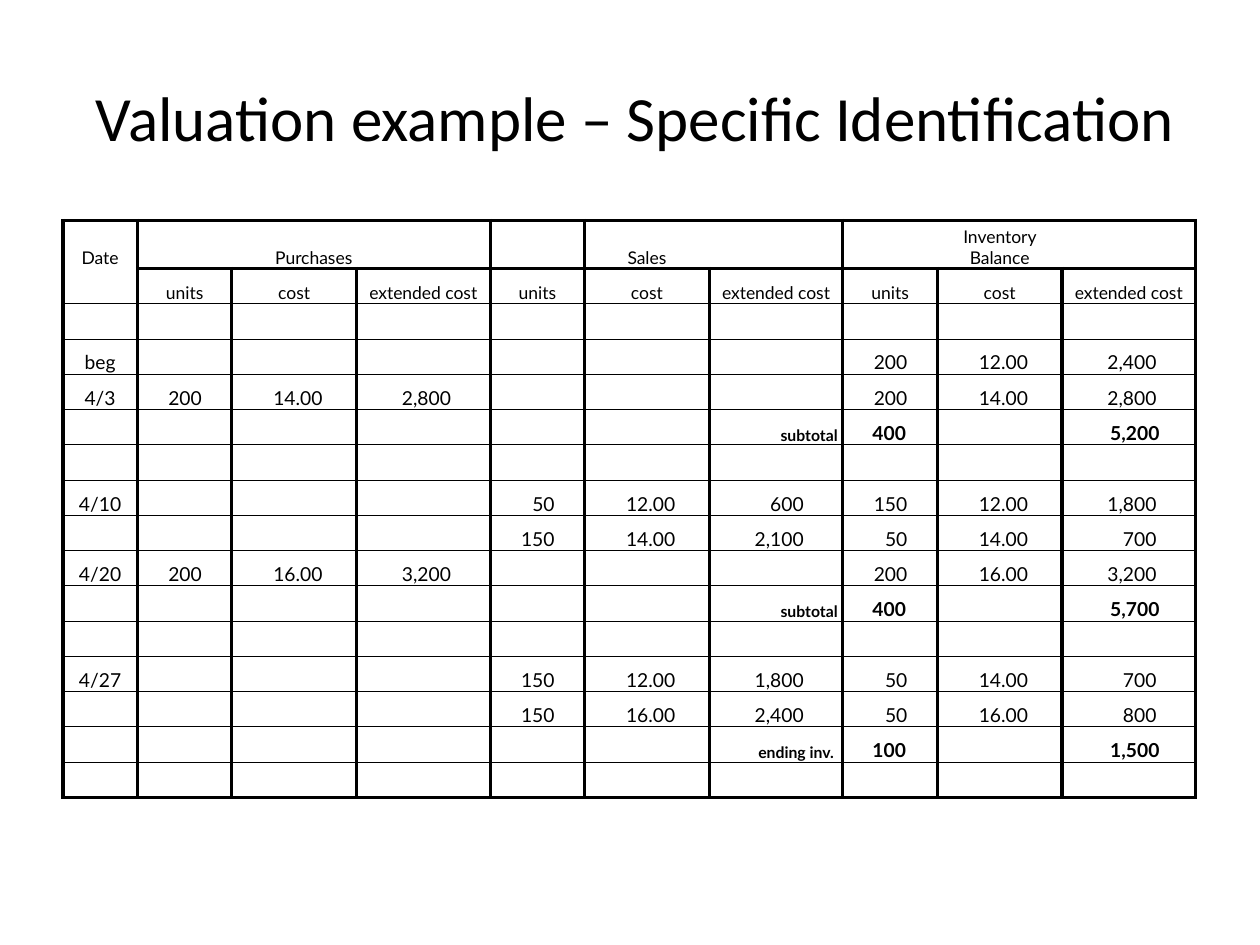
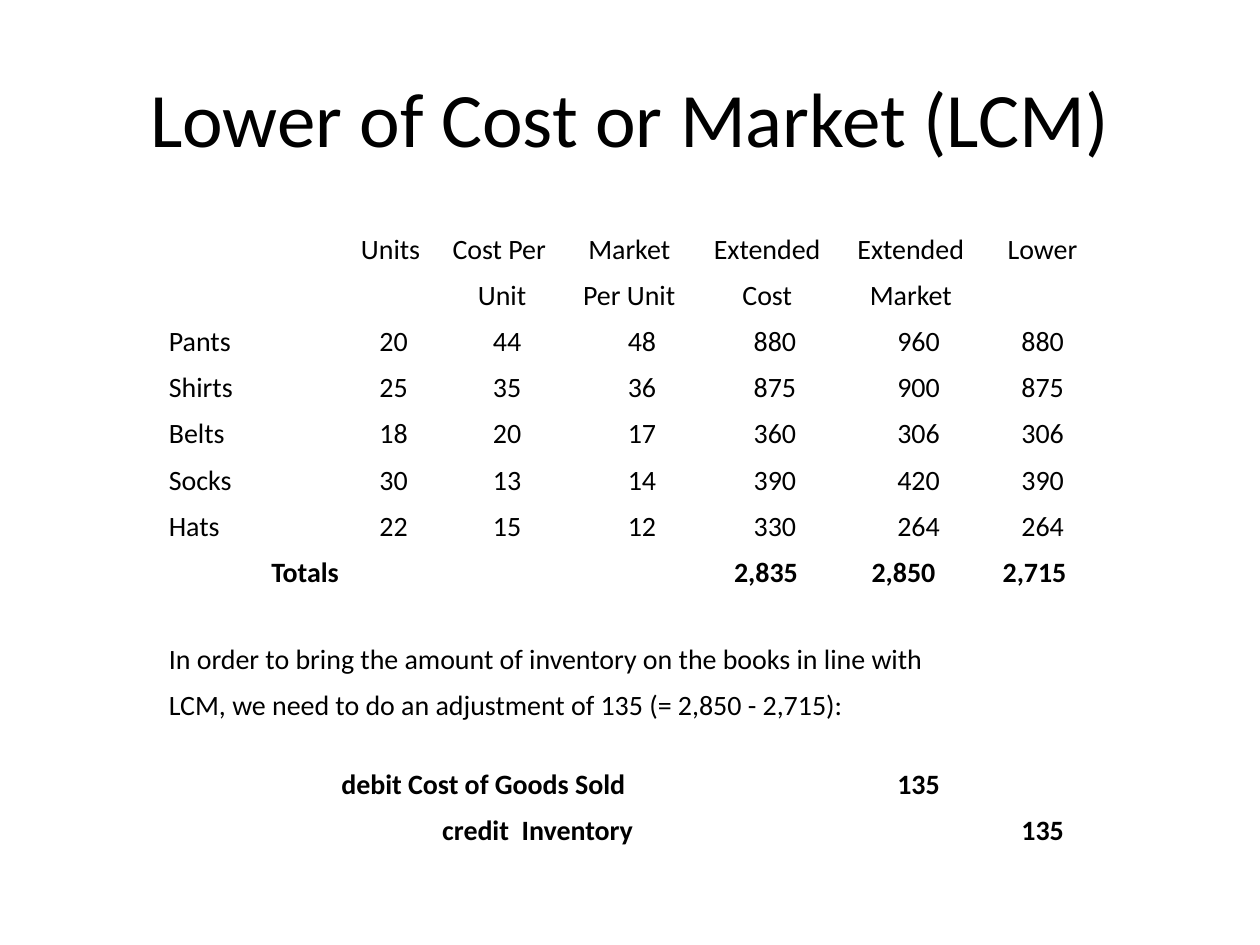
from dataclasses import dataclass

from lxml import etree
from pptx import Presentation
from pptx.dml.color import RGBColor
from pptx.enum.text import MSO_ANCHOR, PP_ALIGN
from pptx.oxml.ns import qn
from pptx.util import Pt

LEFT, CENTER, RIGHT = PP_ALIGN.LEFT, PP_ALIGN.CENTER, PP_ALIGN.RIGHT
MIDDLE, BOTTOM = MSO_ANCHOR.MIDDLE, MSO_ANCHOR.BOTTOM
NO_GRID_STYLE = "{2D5ABB26-0587-4C30-8999-92F81FD0307C}"


@dataclass(frozen=True)
class Theme:
    ink: str = "000000"
    font: str = "Calibri"
    ledger_font: str = "Lato"
    title: int = 44
    long_title: int = 36
    body: int = 16
    ledger: int = 11
    ledger_head: int = 10
    ledger_label: int = 9
    heavy: float = 2
    medium: float = 1
    hair: float = 0.5
    inset: float = 0.75


THEME = Theme()

LEDGER_WIDTHS = [42.48] + [54, 71.28, 76.32] * 3
LEDGER_HEIGHTS = [27.36] + [20.16] * 15
LEDGER_INSETS = [THEME.inset] + [17.1, 19.4, 22.3] * 3
LEDGER_BOLD_INSETS = {7: 17.9, 9: 20.6}
LABEL_INSETS = {"subtotal": 3, "ending inv.": 5.2}
GROUP_EDGES = (0, 1, 4, 7, 10)
LEDGER_ROWS = [
    "Date|Purchases||||Sales|||Inventory Balance|",
    "|units|cost|extended cost|units|cost|extended cost|units|cost|extended cost",
    "|||||||||",
    "beg|||||||200|12.00|2,400",
    "4/3|200|14.00|2,800||||200|14.00|2,800",
    "||||||subtotal|400||5,200",
    "|||||||||",
    "4/10||||50|12.00|600|150|12.00|1,800",
    "||||150|14.00|2,100|50|14.00|700",
    "4/20|200|16.00|3,200||||200|16.00|3,200",
    "||||||subtotal|400||5,700",
    "|||||||||",
    "4/27||||150|12.00|1,800|50|14.00|700",
    "||||150|16.00|2,400|50|16.00|800",
    "||||||ending inv.|100||1,500",
    "|||||||||",
]

LCM_WIDTHS = [98.64, 57.6, 69.84, 75.6, 82.08, 82.08, 68.4]
LCM_HEIGHTS = [26.4] * 8 + [23.3] + [26.4] * 2 + [18.7] + [26.4] * 2
LCM_INSETS = [THEME.inset, 19, 24, 22.5, 24.5, 24.5, 22]
LCM_TOTAL_INSETS = {0: THEME.inset, 4: 23.5, 5: 27, 6: 20.5}
LCM_SPANS = {(9, 0): 7, (10, 0): 7, (12, 1): 3, (13, 2): 2}
TOTALS_ROW = 7
ENTRY_ROWS = (12, 13)
LCM_ROWS = [
    "|Units|Cost Per|Market|Extended|Extended|Lower",
    "||Unit|Per Unit|Cost|Market|",
    "Pants|20|44|48|880|960|880",
    "Shirts|25|35|36|875|900|875",
    "Belts|18|20|17|360|306|306",
    "Socks|30|13|14|390|420|390",
    "Hats|22|15|12|330|264|264",
    "Totals||||2,835|2,850|2,715",
    "||||||",
    "In order to bring the amount of inventory on the books in line with||||||",
    "LCM, we need to do an adjustment of 135 (= 2,850 - 2,715):||||||",
    "||||||",
    "|debit Cost of Goods Sold||||135|",
    "||credit  Inventory||||135",
]


def style_paragraph(p, text, size, font, align, bold=False):
    p.alignment = align
    p.font.size = Pt(size)
    p.font.name = font
    p.font.bold = bold
    p.font.color.rgb = RGBColor.from_string(THEME.ink)
    if text:
        p.add_run().text = text
    else:
        etree.SubElement(p._p, qn("a:endParaRPr"), sz=str(size * 100))


def add_title(s, text, left, width, size):
    sp = s.shapes.add_textbox(Pt(left), Pt(21.6), Pt(width), Pt(90))
    tf = sp.text_frame
    tf.word_wrap = True
    tf.vertical_anchor = MIDDLE
    style_paragraph(tf.paragraphs[0], text, size, THEME.font, CENTER)


def add_grid(s, left, top, widths, heights):
    frame = s.shapes.add_table(len(heights), len(widths), Pt(left), Pt(top),
                               Pt(sum(widths)), Pt(sum(heights)))
    table = frame.table
    table.first_row = table.horz_banding = False
    table._tbl.tblPr.find(qn("a:tableStyleId")).text = NO_GRID_STYLE
    for column, width in zip(table.columns, widths):
        column.width = Pt(width)
    for row, height in zip(table.rows, heights):
        row.height = Pt(height)
    return table


def fill_cell(cell, text, size, font, align, bold=False, inset=THEME.inset):
    cell.margin_left = cell.margin_top = Pt(THEME.inset)
    cell.margin_right = Pt(inset)
    cell.margin_bottom = Pt(0)
    cell.vertical_anchor = BOTTOM
    cell.fill.background()
    style_paragraph(cell.text_frame.paragraphs[0], text, size, font, align, bold)


def add_borders(cell, **widths):
    tc_pr = cell._tc.get_or_add_tcPr()
    for side in "LRTB":
        if widths[side]:
            ln = etree.SubElement(tc_pr, qn(f"a:ln{side}"), w=str(Pt(widths[side])))
            fill = etree.SubElement(ln, qn("a:solidFill"))
            etree.SubElement(fill, qn("a:srgbClr"), val=THEME.ink)


def ledger_rule_below(row, col):
    if row == 0:
        return THEME.heavy if col else 0
    if row in (-1, len(LEDGER_ROWS) - 1):
        return THEME.heavy
    return THEME.medium if row == 1 else THEME.hair


def ledger_rule_beside(row, edge):
    return 0 if row == 0 and edge not in GROUP_EDGES else THEME.heavy


def ledger_format(row, col, text, is_total):
    if row < 2:
        return THEME.ledger_head, CENTER, False, THEME.inset
    if col == 0:
        return THEME.ledger, CENTER, False, THEME.inset
    if text in LABEL_INSETS:
        return THEME.ledger_label, RIGHT, True, LABEL_INSETS[text]
    inset = LEDGER_INSETS[col]
    if is_total:
        inset = LEDGER_BOLD_INSETS.get(col, inset)
    return THEME.ledger, RIGHT, is_total, inset


def add_ledger(s):
    table = add_grid(s, 36, 126, LEDGER_WIDTHS, LEDGER_HEIGHTS)
    for row, line in enumerate(LEDGER_ROWS):
        texts = line.split("|")
        is_total = texts[6] in LABEL_INSETS
        for col, text in enumerate(texts):
            cell = table.cell(row, col)
            add_borders(cell,
                        L=ledger_rule_beside(row, col),
                        R=ledger_rule_beside(row, col + 1),
                        T=ledger_rule_below(row - 1, col),
                        B=ledger_rule_below(row, col))
            size, align, bold, inset = ledger_format(row, col, text, is_total)
            fill_cell(cell, text, size, THEME.ledger_font, align, bold, inset)
    table.cell(0, 1).merge(table.cell(0, 3))


def lcm_format(row, col, text):
    bold = row == TOTALS_ROW or row in ENTRY_ROWS
    if row < 2:
        return CENTER, bold, 4 if text == "Cost Per" else THEME.inset
    if row == TOTALS_ROW:
        return RIGHT, bold, LCM_TOTAL_INSETS.get(col, THEME.inset)
    if col == 0 or (row, col) in LCM_SPANS:
        return LEFT, bold, THEME.inset
    return RIGHT, bold, LCM_INSETS[col]


def add_lcm_table(s):
    table = add_grid(s, 95.76, 126, LCM_WIDTHS, LCM_HEIGHTS)
    for row, line in enumerate(LCM_ROWS):
        for col, text in enumerate(line.split("|")):
            align, bold, inset = lcm_format(row, col, text)
            size = THEME.body if text else THEME.ledger_head
            fill_cell(table.cell(row, col), text, size, THEME.font, align, bold, inset)
    for (row, col), span in LCM_SPANS.items():
        table.cell(row, col).merge(table.cell(row, col + span - 1))


def main():
    prs = Presentation()
    prs.slide_width, prs.slide_height = Pt(720), Pt(540)
    blank = prs.slide_layouts[6]

    s = prs.slides.add_slide(blank)
    add_title(s, "Valuation example – Specific Identification", 18, 689.76,
              THEME.long_title)
    add_ledger(s)

    s = prs.slides.add_slide(blank)
    add_title(s, "Lower of Cost or Market (LCM)", 36, 648, THEME.title)
    add_lcm_table(s)

    prs.save("out.pptx")


if __name__ == "__main__":
    main()
